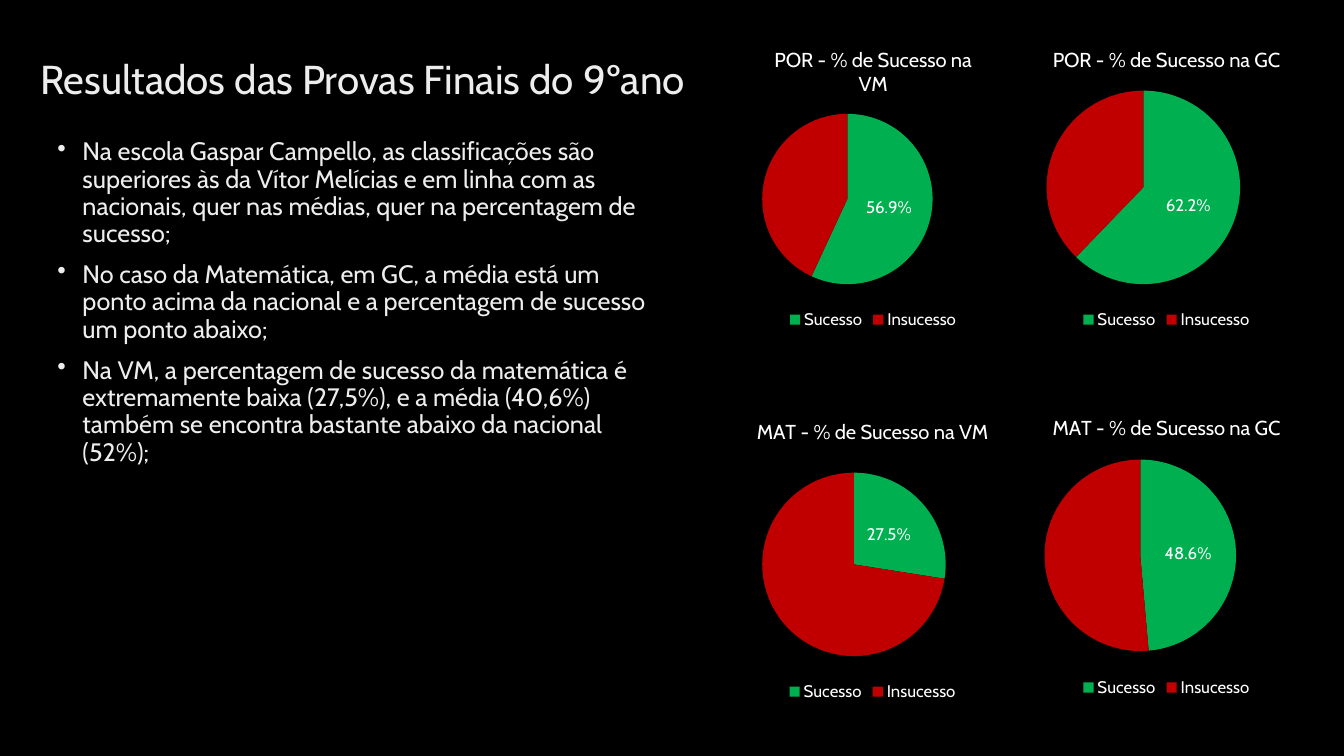
import pptx
import pptx.chart.data
import pptx.dml.color
import pptx.enum.chart
import pptx.enum.text
import pptx.util
from lxml import etree

Inch = pptx.util.Inches
FONT = "Cabin"
WHITE, PALE, GREEN, RED = "FFFFFF", "EDEDED", "00B050", "C00000"
TITLE = "Resultados das Provas Finais do 9ºano"
POINTS = [
    "Na escola Gaspar Campello, as classificações são superiores às da Vítor "
    "Melícias e em linha com as nacionais, quer nas médias, quer na "
    "percentagem de sucesso;",
    "No caso da Matemática, em GC, a média está um ponto acima da nacional e "
    "a percentagem de sucesso um ponto abaixo;",
    "Na VM, a percentagem de sucesso da matemática é extremamente baixa "
    "(27,5%), e a média (40,6%) também se encontra bastante abaixo da "
    "nacional (52%);",
]
PIES = [
    ("POR - % de Sucesso na GC", 0.622, (10.11, 0.31, 2.92, 3), (0.27, 0.59, 1.92)),
    ("POR - % de Sucesso na VM", 0.569, (7.2, 0.31, 2.92, 3), (0.36, 0.82, 1.69)),
    ("MAT - % de Sucesso na VM", 0.275, (7, 4, 3.31, 3), (0.56, 0.69, 1.82)),
    ("MAT - % de Sucesso na GC", 0.486, (10.11, 3.96, 2.92, 3), (0.25, 0.6, 1.9)),
]


def paint(fill, color):
    """Give a fill one solid colour."""
    fill.solid()
    fill.fore_color.rgb = pptx.dml.color.RGBColor.from_string(color)


def style(font, size, color):
    """Set the face, size and colour of a font."""
    font.name = FONT
    font.size = pptx.util.Pt(size)
    font.bold = False
    paint(font.fill, color)


def write(slide, box, lines, size, anchor, bullet=False):
    """Place a text box with one paragraph per line."""
    frame = slide.shapes.add_textbox(*map(Inch, box)).text_frame
    frame.word_wrap = True
    frame.vertical_anchor = anchor
    for i, line in enumerate(lines):
        para = frame.add_paragraph() if i else frame.paragraphs[0]
        para.text = line
        para.line_spacing = 0.9
        if i:
            para.space_before = pptx.util.Pt(10)
        if bullet:
            props = para._p.get_or_add_pPr()
            props.set("marL", str(Inch(0.25)))
            props.set("indent", str(-Inch(0.25)))
            mark = pptx.oxml.ns.qn("a:buChar")
            etree.SubElement(props, mark).set("char", "•")
        style(para.font, size, PALE)


def place(chart, box, disc):
    """Fix the disc, given as left, top and diameter, inside the chart box."""
    qn = pptx.oxml.ns.qn
    area = chart._chartSpace.chart.plotArea
    for old in area.findall(qn("c:layout")):
        area.remove(old)
    layout = etree.Element(qn("c:layout"))
    area.insert(0, layout)
    manual = etree.SubElement(layout, qn("c:manualLayout"))
    left, top, size = disc
    wide, high = box[2:]
    parts = [("layoutTarget", "inner"), ("xMode", "edge"), ("yMode", "edge"),
             ("x", left / wide), ("y", top / high),
             ("w", size / wide), ("h", size / high)]
    for name, val in parts:
        etree.SubElement(manual, qn("c:" + name)).set("val", str(val))


def pie(slide, title, rate, box, disc):
    """Draw one pie of success against failure."""
    data = pptx.chart.data.CategoryChartData(number_format="0.0%")
    data.categories = ["Sucesso", "Insucesso"]
    data.add_series("Series 1", [rate, round(1 - rate, 3)])
    kind = pptx.enum.chart.XL_CHART_TYPE.PIE
    chart = slide.shapes.add_chart(kind, *map(Inch, box), data).chart
    style(chart.font, 10, WHITE)
    chart.has_title = True
    head = chart.chart_title
    head.include_in_layout = False
    head.text_frame.text = title
    style(head.text_frame.paragraphs[0].font, 14.4, WHITE)
    chart.has_legend = True
    chart.legend.position = pptx.enum.chart.XL_LEGEND_POSITION.BOTTOM
    chart.legend.include_in_layout = False
    style(chart.legend.font, 12, WHITE)
    plot = chart.plots[0]
    plot.vary_by_categories = True
    series = plot.series[0]
    for i, color in enumerate((GREEN, RED)):
        paint(series.points[i].format.fill, color)
    series.data_labels.show_value = False
    label = series.points[0].data_label
    style(label.font, 12, WHITE)
    label.position = pptx.enum.chart.XL_LABEL_POSITION.CENTER
    place(chart, box, disc)


def main():
    """Build and save the slide."""
    deck = pptx.Presentation()
    deck.slide_width, deck.slide_height = Inch(13.33), Inch(7.5)
    slide = deck.slides.add_slide(deck.slide_layouts[6])
    paint(slide.background.fill, "000000")
    anchor = pptx.enum.text.MSO_ANCHOR
    write(slide, (0.3, 0.31, 6.91, 0.99), [TITLE], 28.8, anchor.MIDDLE)
    write(slide, (0.47, 1.33, 6.2, 5.25), POINTS, 18, anchor.TOP, True)
    for item in PIES:
        pie(slide, *item)
    deck.save("out.pptx")


if __name__ == "__main__":
    main()
